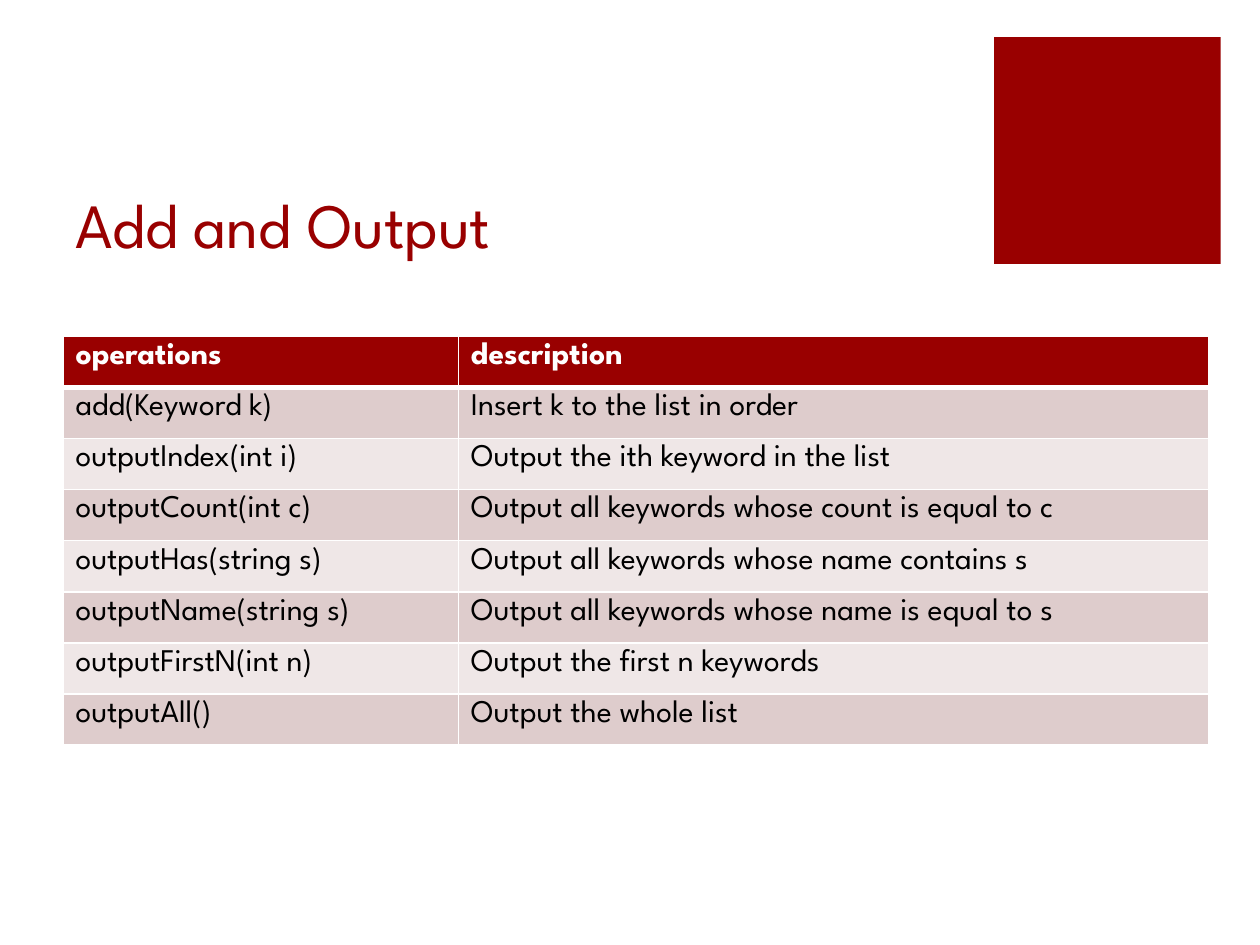
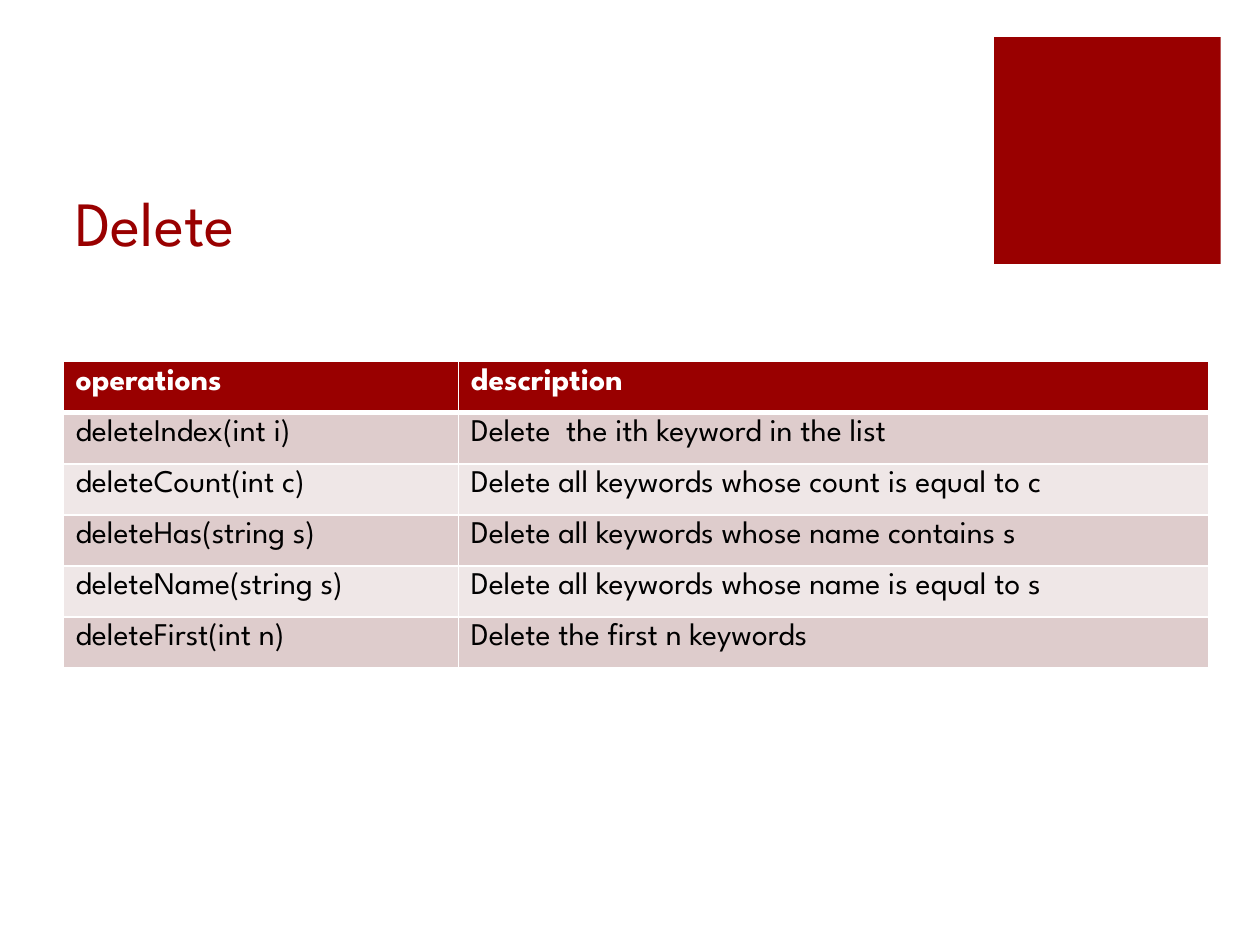
from dataclasses import dataclass

from lxml import etree
from pptx import Presentation
from pptx.dml.color import RGBColor
from pptx.enum.shapes import MSO_SHAPE
from pptx.enum.text import MSO_ANCHOR
from pptx.oxml.ns import qn
from pptx.util import Cm, Pt

RECTANGLE = MSO_SHAPE.RECTANGLE
BOTTOM = MSO_ANCHOR.BOTTOM
TOP = MSO_ANCHOR.TOP
BLANK_LAYOUT = 6


@dataclass(frozen=True)
class Theme:
    font: str = "League Spartan"
    accent: str = "990000"
    paper: str = "FFFFFF"
    ink: str = "000000"
    bands: tuple = ("DECCCC", "EFE7E7")
    title_size: int = 36
    table_size: int = 18
    thin_rule: int = 1
    header_rule: int = 3


# Content
HEADER = ("operations", "description")
ADD_AND_OUTPUT = [
    ("add(Keyword k)", "Insert k to the list in order"),
    ("outputIndex(int i)", "Output the ith keyword in the list"),
    ("outputCount(int c)", "Output all keywords whose count is equal to c"),
    ("outputHas(string s)", "Output all keywords whose name contains s"),
    ("outputName(string s)", "Output all keywords whose name is equal to s"),
    ("outputFirstN(int n)", "Output the first n keywords"),
    ("outputAll()", "Output the whole list"),
]
DELETE = [
    ("deleteIndex(int i)", "Delete  the ith keyword in the list"),
    ("deleteCount(int c)", "Delete all keywords whose count is equal to c"),
    ("deleteHas(string s)", "Delete all keywords whose name contains s"),
    ("deleteName(string s)", "Delete all keywords whose name is equal to s"),
    ("deleteFirst(int n)", "Delete the first n keywords"),
]

# Layout in centimetres
LEFT = 1.27
COLUMN_WIDTHS = (7.97, 15.13)
ROW_HEIGHT = 1.03


def write_text(frame, text, *, font, size, color, bold=False, anchor=TOP):
    frame.word_wrap = True
    frame.vertical_anchor = anchor
    span = frame.paragraphs[0].add_run()
    span.text = text
    span.font.name = font
    span.font.size = Pt(size)
    span.font.bold = bold
    span.font.color.rgb = RGBColor.from_string(color)


def set_borders(cell, color, widths):
    """Draw cell borders; widths are points for left, right, top, bottom."""
    properties = cell._tc.get_or_add_tcPr()
    for index, (side, width) in enumerate(zip("LRTB", widths)):
        line = etree.Element(qn(f"a:ln{side}"), w=str(Pt(width)))
        fill = etree.SubElement(line, qn("a:solidFill"))
        etree.SubElement(fill, qn("a:srgbClr"), val=color)
        properties.insert(index, line)


class DeckBuilder:
    def __init__(self, theme):
        self.theme = theme
        self.deck = Presentation()
        self.deck.slide_width = Cm(25.4)
        self.deck.slide_height = Cm(19.05)
        self.page = None

    def start_page(self):
        layout = self.deck.slide_layouts[BLANK_LAYOUT]
        self.page = self.deck.slides.add_slide(layout)
        background = self.page.background.fill
        background.solid()
        background.fore_color.rgb = RGBColor.from_string(self.theme.paper)
        self.add_corner_square()

    def add_corner_square(self):
        square = self.page.shapes.add_shape(
            RECTANGLE, Cm(20.04), Cm(0.75), Cm(4.57), Cm(4.57))
        square.shadow.inherit = False
        square.fill.solid()
        square.fill.fore_color.rgb = RGBColor.from_string(self.theme.accent)
        square.line.fill.background()

    def add_title(self, text, top):
        box = self.page.shapes.add_textbox(
            Cm(LEFT), Cm(top), Cm(18.08), Cm(3.18))
        write_text(box.text_frame, text, font=self.theme.font,
                   size=self.theme.title_size, color=self.theme.accent,
                   anchor=BOTTOM)

    def add_operations_table(self, operations, top):
        rows = [HEADER, *operations]
        table = self.page.shapes.add_table(
            len(rows), len(HEADER), Cm(LEFT), Cm(top),
            Cm(sum(COLUMN_WIDTHS)), Cm(ROW_HEIGHT * len(rows))).table
        for column, width in zip(table.columns, COLUMN_WIDTHS):
            column.width = Cm(width)
        for row_index, values in enumerate(rows):
            table.rows[row_index].height = Cm(ROW_HEIGHT)
            for column_index, text in enumerate(values):
                self.fill_cell(table.cell(row_index, column_index), text, row_index)

    def fill_cell(self, cell, text, row_index):
        theme = self.theme
        is_header = row_index == 0
        fill = theme.accent if is_header else theme.bands[(row_index - 1) % 2]
        cell.fill.solid()
        cell.fill.fore_color.rgb = RGBColor.from_string(fill)
        write_text(cell.text_frame, text, font=theme.font, size=theme.table_size,
                   color=theme.paper if is_header else theme.ink, bold=is_header)
        # The heavy rule is shared by the header and the first row below it
        above = theme.header_rule if row_index == 1 else theme.thin_rule
        below = theme.header_rule if is_header else theme.thin_rule
        set_borders(cell, theme.paper,
                    (theme.thin_rule, theme.thin_rule, above, below))


def main():
    builder = DeckBuilder(Theme())

    # Add and Output
    builder.start_page()
    builder.add_title("Add and Output", top=2.21)
    builder.add_operations_table(ADD_AND_OUTPUT, top=6.78)

    # Delete
    builder.start_page()
    builder.add_title("Delete", top=2.16)
    builder.add_operations_table(DELETE, top=7.29)

    builder.deck.save("out.pptx")


if __name__ == "__main__":
    main()
